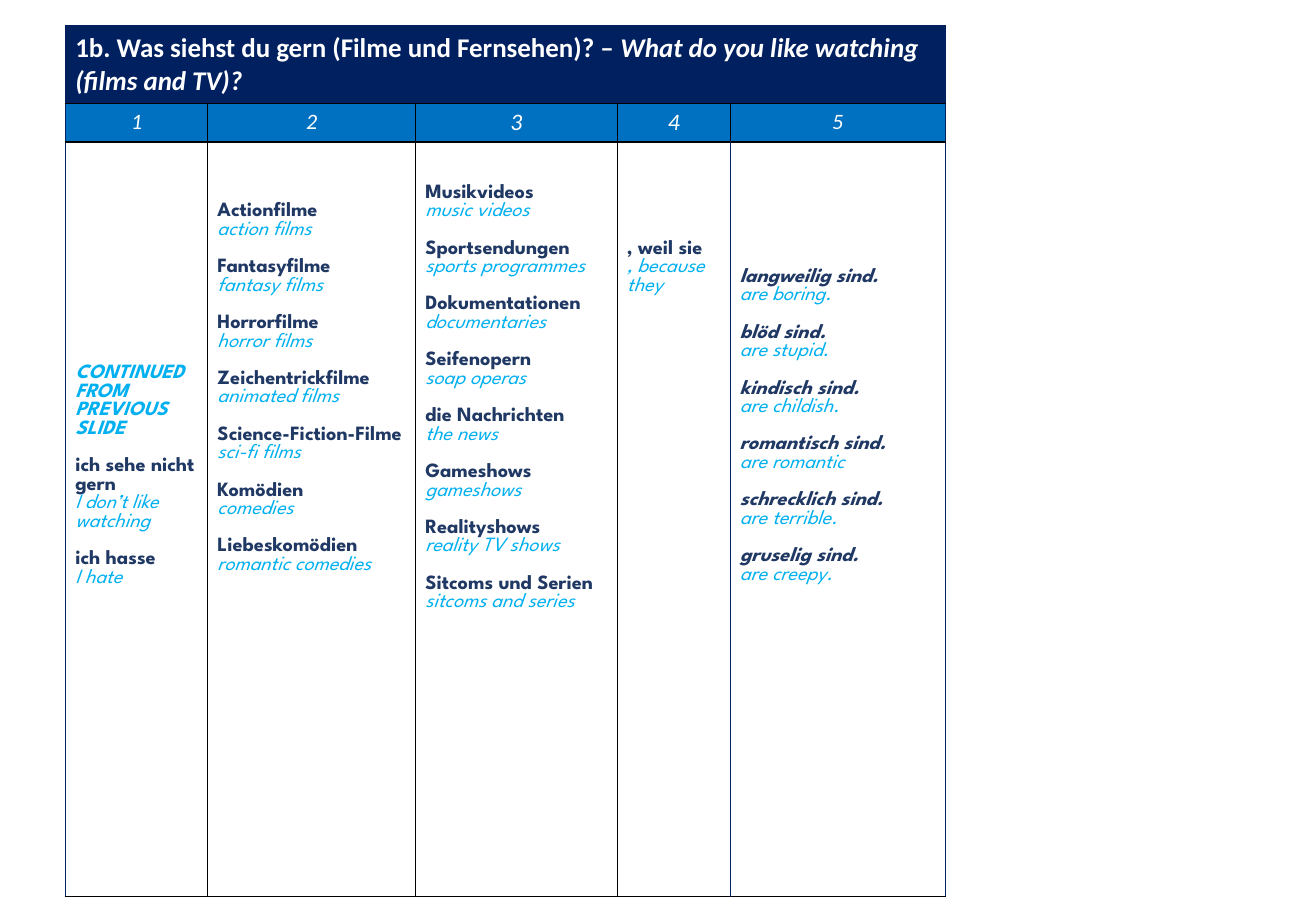
"""Builds a German and English vocabulary table about films and television."""
from dataclasses import dataclass

import pptx
import pptx.dml.color
import pptx.enum.text
import pptx.oxml
import pptx.oxml.ns
import pptx.table
import pptx.text.text
import pptx.util

Inches, Pt = pptx.util.Inches, pptx.util.Pt
ALIGN, ANCHOR = pptx.enum.text.PP_ALIGN, pptx.enum.text.MSO_ANCHOR
NAVY, BLUE, BLACK, WHITE = "002060", "0070C0", "000000", "FFFFFF"
DARK, SKY = "203864", "00B0F0"
LINE = 11.04
PAD = 0.04
TITLE = {"name": "Calibri", "size": Pt(16), "bold": True, "italic": False}
NUMBER = {"name": "Calibri", "bold": False, "italic": True}
GERMAN = {"name": "League Spartan", "size": Pt(12), "bold": True, "italic": False}
ENGLISH = GERMAN | {"bold": False, "italic": True}
STRONG = GERMAN | {"italic": True}


@dataclass
class Column:
    width: float
    number_size: int
    phrases: list[tuple[str, str]]
    top_lines: int = 0
    bottom: float = PAD
    anchor: ANCHOR = ANCHOR.TOP
    note: str = ""
    german: dict | None = None
    left_edge: str = BLACK


COLUMNS = [
    Column(1.17, 13, [
        ("ich sehe nicht gern", "I don’t like watching"),
        ("ich hasse", "I hate"),
    ], bottom=0.75, anchor=ANCHOR.MIDDLE, note="CONTINUED FROM PREVIOUS SLIDE", left_edge=NAVY),
    Column(1.71, 13, [
        ("Actionfilme", "action films"),
        ("Fantasyfilme", "fantasy films"),
        ("Horrorfilme", "horror films"),
        ("Zeichentrickfilme", "animated films"),
        ("Science-Fiction-Filme", "sci-fi films"),
        ("Komödien", "comedies"),
        ("Liebeskomödien", "romantic comedies"),
    ], top_lines=3),
    Column(1.66, 14, [
        ("Musikvideos", "music videos"),
        ("Sportsendungen", "sports programmes"),
        ("Dokumentationen", "documentaries"),
        ("Seifenopern", "soap operas"),
        ("die Nachrichten", "the news"),
        ("Gameshows", "gameshows"),
        ("Realityshows", "reality TV shows"),
        ("Sitcoms und Serien", "sitcoms and series"),
    ], top_lines=2),
    Column(0.93, 14, [(", weil sie", ", because they")], top_lines=5),
    Column(1.77, 13, [
        ("langweilig sind.", "are boring."),
        ("blöd sind.", "are stupid."),
        ("kindisch sind.", "are childish."),
        ("romantisch sind.", "are romantic"),
        ("schrecklich sind.", "are terrible."),
        ("gruselig sind.", "are creepy."),
    ], bottom=1.57, anchor=ANCHOR.MIDDLE, german=STRONG, left_edge=NAVY),
]
ROWS = [0.64, 0.31, 6.21]


def rgb(color: str) -> pptx.dml.color.RGBColor:
    return pptx.dml.color.RGBColor.from_string(color)


def add_run(p: pptx.text.text._Paragraph, text: str, color: str, fmt: dict) -> None:
    r = p.add_run()
    r.text = text
    for key, value in fmt.items():
        setattr(r.font, key, value)
    r.font.color.rgb = rgb(color)


def set_borders(cell: pptx.table._Cell, left: str, right: str, top: str = BLACK) -> None:
    tcPr = cell._tc.get_or_add_tcPr()
    for side, color in {"L": left, "R": right, "T": top, "B": BLACK}.items():
        tcPr.append(pptx.oxml.parse_xml(
            f'<a:ln{side} {pptx.oxml.ns.nsdecls("a")} w="12700"><a:solidFill>'
            f'<a:srgbClr val="{color}"/></a:solidFill></a:ln{side}>'))


def set_cell(cell: pptx.table._Cell, fill: str | None, anchor: ANCHOR = ANCHOR.TOP,
             top: float = PAD, bottom: float = PAD) -> None:
    layout = {"margin_left": Inches(0.08), "margin_right": Inches(0.08),
              "margin_top": Inches(top), "margin_bottom": Inches(bottom),
              "vertical_anchor": anchor}
    for key, value in layout.items():
        setattr(cell, key, value)
    if fill:
        cell.fill.solid()
        cell.fill.fore_color.rgb = rgb(fill)
    else:
        cell.fill.background()


def fill_phrases(cell: pptx.table._Cell, column: Column) -> None:
    lines = [(column.note, SKY, STRONG)] if column.note else []
    for german, english in column.phrases:
        lines += [(german, DARK, column.german or GERMAN), (english, SKY, ENGLISH)]
    tf = cell.text_frame
    for i, (text, color, fmt) in enumerate(lines):
        p = tf.add_paragraph() if i else tf.paragraphs[0]
        if i and color == DARK:
            p.space_before = Pt(LINE)
        add_run(p, text, color, fmt)


def build_table(s: pptx.slide.Slide) -> None:
    width = sum(c.width for c in COLUMNS)
    table = s.shapes.add_table(len(ROWS), len(COLUMNS), Inches(0.54), Inches(0.21),
                               Inches(width), Inches(sum(ROWS))).table
    table.first_row = table.horz_banding = False
    for row, height in zip(table.rows, ROWS):
        row.height = Inches(height)

    for i, column in enumerate(COLUMNS):
        table.columns[i].width = Inches(column.width)
        title, number, phrases = (table.cell(row, i) for row in range(len(ROWS)))
        last = i == len(COLUMNS) - 1
        set_borders(title, NAVY, NAVY, NAVY)
        set_borders(number, BLACK if i else NAVY, NAVY if last else BLACK)
        set_borders(phrases, column.left_edge, NAVY if last else COLUMNS[i + 1].left_edge)
        set_cell(title, NAVY, ANCHOR.MIDDLE, 0.05, 0.05)
        set_cell(number, BLUE)
        set_cell(phrases, None, column.anchor, PAD + column.top_lines * LINE / 72, column.bottom)
        p = number.text_frame.paragraphs[0]
        p.alignment = ALIGN.CENTER
        add_run(p, str(i + 1), WHITE, NUMBER | {"size": Pt(column.number_size)})
        fill_phrases(phrases, column)

    title = table.cell(0, 0)
    title.merge(table.cell(0, len(COLUMNS) - 1))
    p = title.text_frame.paragraphs[0]
    add_run(p, "1b. Was siehst du gern (Filme und Fernsehen)? – ", WHITE, TITLE)
    add_run(p, "What do you like watching (films and TV)?", WHITE, TITLE | {"italic": True})


def main() -> None:
    prs = pptx.Presentation()
    prs.slide_width, prs.slide_height = Inches(10.83), Inches(7.5)
    build_table(prs.slides.add_slide(prs.slide_layouts[6]))
    prs.save("out.pptx")


if __name__ == "__main__":
    main()
